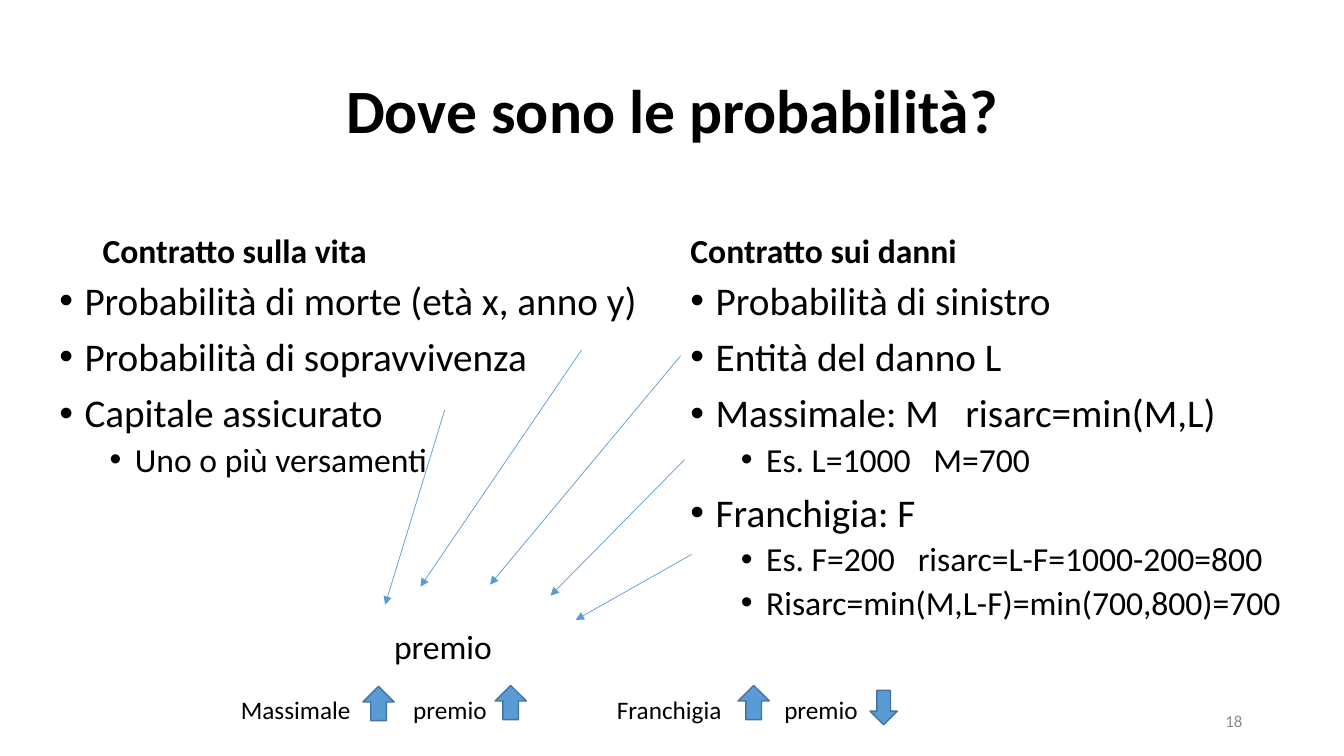
import pptx
import pptx.dml.color
import pptx.enum.shapes
import pptx.enum.text
import pptx.oxml
import pptx.oxml.ns
import pptx.util

ALIGN = pptx.enum.text.PP_ALIGN
ANCHOR = pptx.enum.text.MSO_ANCHOR
SHAPE = pptx.enum.shapes.MSO_SHAPE
EMU_PER_PX = 9144


def px(length):
    return pptx.util.Emu(length * EMU_PER_PX)


def color(hex_string):
    return pptx.dml.color.RGBColor.from_string(hex_string)


def add_xml(parent, tag, **attributes):
    element = pptx.oxml.parse_xml(f"<a:{tag} {pptx.oxml.ns.nsdecls('a')}/>")
    for name, value in attributes.items():
        element.set(name, str(value))
    parent.append(element)


class SlideBuilder:
    FONT = "Calibri"
    TEXT = "000000"
    MUTED = "8C8C8C"
    ACCENT = "5B9BD5"
    OUTLINE = "43739E"
    LEVELS = ((28, 10, 25), (24, 5, 75))
    HANGING = 25
    WIDE_GAP = "|"

    def __init__(self, presentation):
        layout = presentation.slide_layouts.get_by_name("Title Only")
        self.slide = presentation.slides.add_slide(layout)
        self.shapes = self.slide.shapes

    def format_run(self, run, size, bold=False, hex_string=TEXT):
        run.font.name = self.FONT
        run.font.size = pptx.util.Pt(size)
        run.font.bold = bold
        run.font.color.rgb = color(hex_string)

    def fill_text(self, shape, text, size, bold=False, hex_string=TEXT,
                  align=ALIGN.LEFT, anchor=ANCHOR.TOP, line_spacing=1.0):
        frame = shape.text_frame
        frame.text = text
        frame.word_wrap = True
        frame.auto_size = pptx.enum.text.MSO_AUTO_SIZE.NONE
        frame.vertical_anchor = anchor
        paragraph = frame.paragraphs[0]
        paragraph.alignment = align
        paragraph.line_spacing = line_spacing
        self.format_run(paragraph.runs[0], size, bold, hex_string)

    def title(self, text, left, top, width, height):
        shape = self.shapes.title
        shape.left, shape.top = px(left), px(top)
        shape.width, shape.height = px(width), px(height)
        self.fill_text(shape, text, 44, True, align=ALIGN.CENTER,
                       anchor=ANCHOR.MIDDLE, line_spacing=0.9)

    def text(self, text, left, top, width, height, size, **style):
        shape = self.shapes.add_textbox(px(left), px(top), px(width), px(height))
        self.fill_text(shape, text, size, **style)

    def add_bullet_runs(self, paragraph, text, size):
        first, *others = text.split(self.WIDE_GAP)
        self.format_run(paragraph.add_run(), size)
        paragraph.runs[0].text = first
        for part in others:
            for content, spacing in ((" ", size * 45), (part, 0)):
                run = paragraph.add_run()
                run.text = content
                self.format_run(run, size)
                run.font._element.set("spc", str(spacing))

    def bullets(self, items, left, top, width, height):
        shape = self.shapes.add_textbox(px(left), px(top), px(width), px(height))
        frame = shape.text_frame
        frame.word_wrap = True
        for index, (level, text) in enumerate(items):
            paragraph = frame.add_paragraph() if index else frame.paragraphs[0]
            size, space_before, indent = self.LEVELS[level]
            paragraph.level = level
            paragraph.line_spacing = 0.9
            paragraph.space_before = pptx.util.Pt(space_before)
            properties = paragraph._p.get_or_add_pPr()
            properties.set("marL", str(px(indent)))
            properties.set("indent", str(-px(self.HANGING)))
            add_xml(properties, "buFont", typeface="Arial")
            add_xml(properties, "buChar", char="•")
            self.add_bullet_runs(paragraph, text, size)

    def arrow_line(self, start, end):
        connector = self.shapes.add_connector(
            pptx.enum.shapes.MSO_CONNECTOR.STRAIGHT,
            *(px(length) for length in (*start, *end)))
        connector.line.color.rgb = color(self.ACCENT)
        connector.line.width = pptx.util.Pt(0.5)
        add_xml(connector.line._get_or_add_ln(), "tailEnd", type="triangle")
        add_xml(connector._element.spPr, "effectLst")

    def block_arrow(self, kind, left, top, width, height):
        shape = self.shapes.add_shape(kind, px(left), px(top), px(width), px(height))
        shape.shadow.inherit = False
        shape.fill.solid()
        shape.fill.fore_color.rgb = color(self.ACCENT)
        shape.line.color.rgb = color(self.OUTLINE)
        shape.line.width = pptx.util.Pt(1)


def main():
    presentation = pptx.Presentation()
    presentation.slide_width, presentation.slide_height = px(1333), px(750)
    builder = SlideBuilder(presentation)

    builder.title("Dove sono le probabilità?", 92, 40, 1150, 145)
    for heading, left, width in (("Contratto sulla vita", 92, 564),
                                 ("Contratto sui danni", 675, 567)):
        builder.text(heading, left, 184, width, 90, 24, bold=True,
                     anchor=ANCHOR.BOTTOM, line_spacing=0.9)

    life_items = (
        (0, "Probabilità di morte (età x, anno y)"),
        (0, "Probabilità di sopravvivenza"),
        (0, "Capitale assicurato"),
        (1, "Uno o più versamenti"),
    )
    damage_items = (
        (0, "Probabilità di sinistro"),
        (0, "Entità del danno L"),
        (0, "Massimale: M|risarc=min(M,L)"),
        (1, "Es. L=1000|M=700"),
        (0, "Franchigia: F"),
        (1, "Es. F=200|risarc=L-F=1000-200=800"),
        (1, "Risarc=min(M,L-F)=min(700,800)=700"),
    )
    builder.bullets(life_items, 49, 274, 607, 403)
    builder.bullets(damage_items, 675, 274, 622, 403)
    builder.text("18", 942, 695, 300, 40, 12, hex_string=builder.MUTED,
                 align=ALIGN.RIGHT, anchor=ANCHOR.MIDDLE)

    for start, end in (((441, 407), (382, 600)), ((577, 347), (417, 582)),
                       ((675, 353), (486, 580)), ((679, 456), (546, 591)),
                       ((686, 550), (571, 615))):
        builder.arrow_line(start, end)
    builder.text("premio", 381, 616, 268, 50, 24)

    for label, left in (("Massimale", 229), ("premio", 400),
                        ("Franchigia", 602), ("premio", 768)):
        builder.text(label, left, 684, 135, 40, 18)
    for left, top in ((360, 681), (491, 680), (732, 680)):
        builder.block_arrow(SHAPE.UP_ARROW, left, top, 31, 34)
    builder.block_arrow(SHAPE.DOWN_ARROW, 863, 685, 27, 34)

    presentation.save("out.pptx")


if __name__ == "__main__":
    main()
